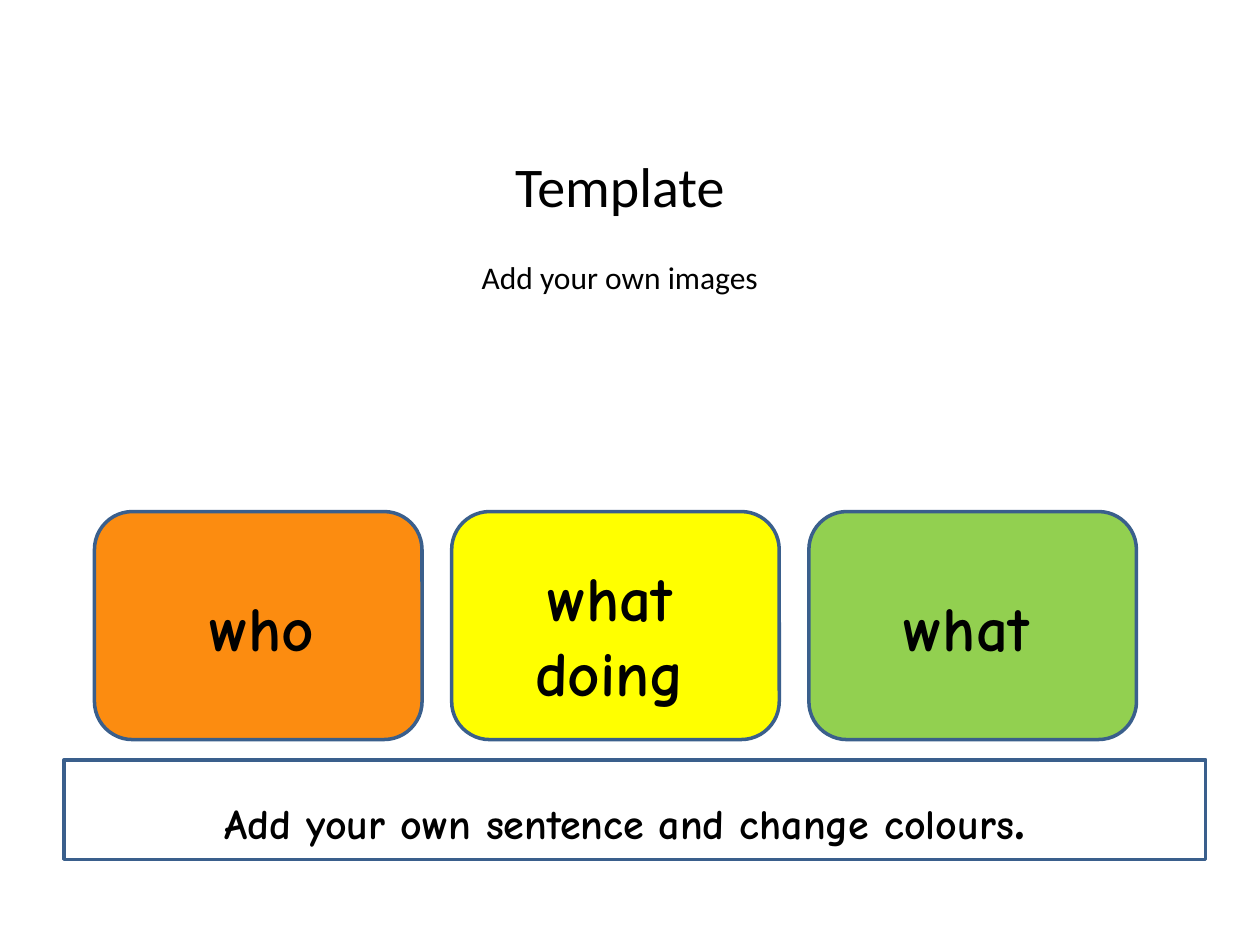
from pptx import Presentation
from pptx.dml.color import RGBColor
from pptx.enum import shapes, text
from pptx.util import Inches, Pt

BLACK = RGBColor(0x00, 0x00, 0x00)
BLUE = RGBColor(0x3A, 0x5F, 0x8C)
ORANGE = RGBColor(0xFC, 0x8C, 0x10)
YELLOW = RGBColor(0xFF, 0xFF, 0x00)
GREEN = RGBColor(0x92, 0xD0, 0x50)

presentation = Presentation()
presentation.slide_width = Inches(10)
presentation.slide_height = Inches(7.5)
slide = presentation.slides.add_slide(presentation.slide_layouts[0])


def add_panel(kind, left, top, width, height, fill=None):
    shape = slide.shapes.add_shape(
        kind, Inches(left), Inches(top), Inches(width), Inches(height))
    shape.shadow.inherit = False
    if fill is None:
        shape.fill.background()
    else:
        shape.fill.solid()
        shape.fill.fore_color.rgb = fill
    shape.line.color.rgb = BLUE
    shape.line.width = Pt(2)


def write(shape, runs, font_name, bold):
    frame = shape.text_frame
    frame.word_wrap = True
    frame.auto_size = text.MSO_AUTO_SIZE.NONE
    frame.vertical_anchor = text.MSO_ANCHOR.TOP
    paragraph = frame.paragraphs[0]
    paragraph.alignment = text.PP_ALIGN.CENTER
    paragraph.space_before = Pt(0)
    for wording, size in runs:
        run = paragraph.add_run()
        run.text = wording
        run.font.color.rgb = BLACK
        font_format = {"name": font_name, "size": Pt(size), "bold": bold}
        for attribute, value in font_format.items():
            setattr(run.font, attribute, value)


# Title and subtitle
headings = [
    (slide.shapes.title, "Template", 32, 1.15, 0.65),
    (slide.placeholders[1], "Add your own images", 18, 2.0, 0.4),
]
for shape, wording, size, top, height in headings:
    position = {"left": 3.58, "top": top, "width": 2.68, "height": height}
    for attribute, value in position.items():
        setattr(shape, attribute, Inches(value))
    write(shape, [(wording, size)], "Calibri", False)

# Coloured cards in equal steps
for index, fill in enumerate([ORANGE, YELLOW, GREEN]):
    add_panel(shapes.MSO_SHAPE.ROUNDED_RECTANGLE,
              0.75 + index * 2.835, 4.06, 2.6, 1.81, fill)

# Sentence frame
add_panel(shapes.MSO_SHAPE.RECTANGLE, 0.51, 6.03, 9.06, 0.79)

# Card labels and sentence
labels = [
    ([("who", 36)], 0.98, 4.62, 2.2, 0.71),
    ([("what doing", 36)], 3.74, 4.38, 2.2, 1.31),
    ([("what", 36)], 6.57, 4.62, 2.2, 0.71),
    ([("Add your own sentence and change colours", 24), (".", 36)],
     0.67, 6.11, 8.58, 0.71),
]
for runs, *box in labels:
    shape = slide.shapes.add_textbox(*[Inches(length) for length in box])
    write(shape, runs, "Comic Neue", True)

presentation.save("out.pptx")
